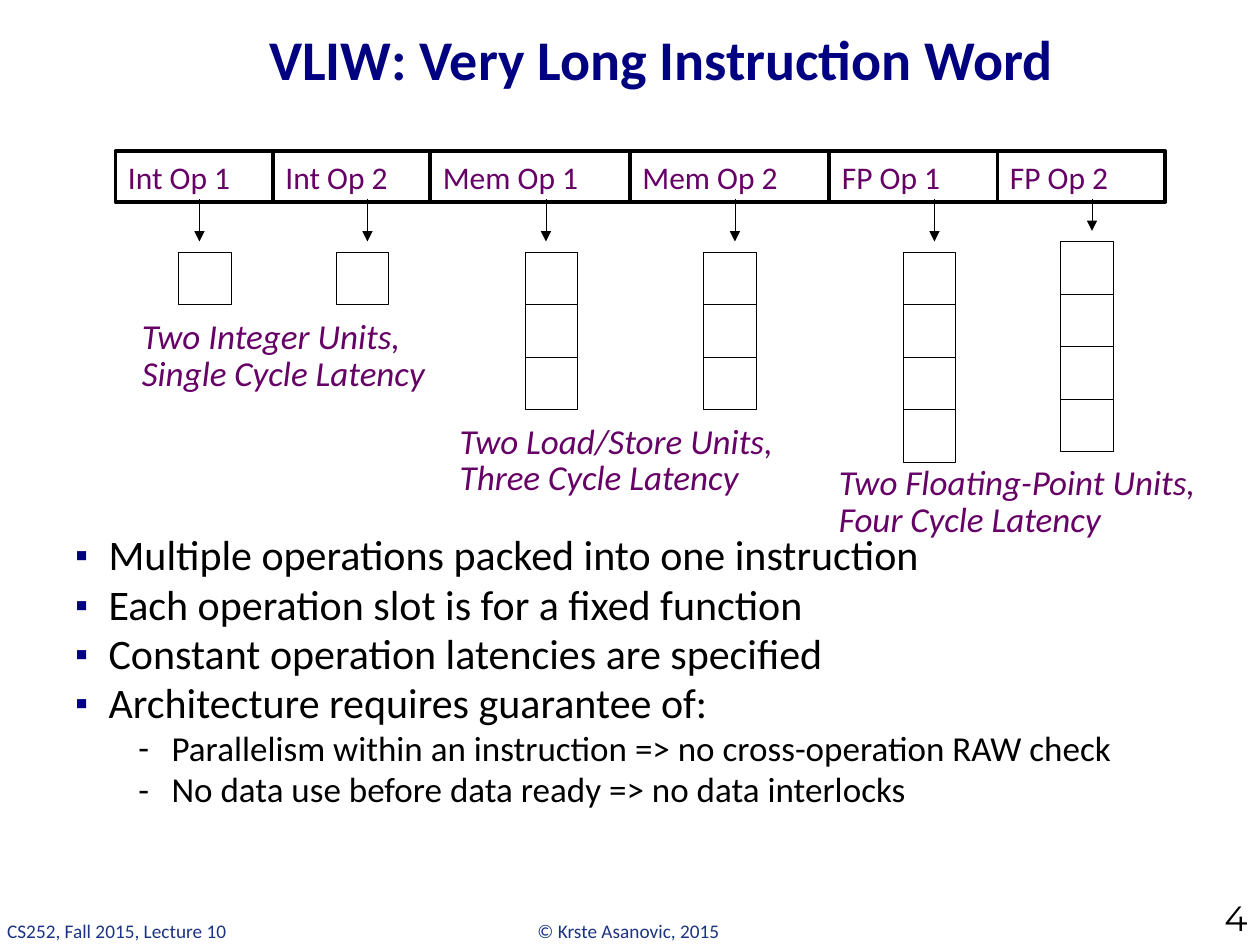
from itertools import accumulate

from lxml.etree import SubElement
from pptx import Presentation
from pptx.dml.color import RGBColor
from pptx.enum.shapes import MSO_CONNECTOR, MSO_SHAPE
from pptx.enum.text import MSO_ANCHOR, MSO_AUTO_SIZE, PP_ALIGN
from pptx.oxml.ns import qn
from pptx.util import Pt

COLORS = {"title": "000081", "bullet": "000080", "label": "660066",
          "footer": "1B3384", "black": "000000"}

FORMATS = {
    "title": {"size": Pt(32), "name": "Calibri", "bold": True},
    "point": {"size": Pt(24), "name": "Calibri"},
    "subpoint": {"size": Pt(20), "name": "Calibri"},
    "caption": {"size": Pt(20), "name": "Calibri", "italic": True},
    "slot": {"size": Pt(18), "name": "Calibri"},
    "footer": {"size": Pt(11), "name": "Calibri"},
    "number": {"size": Pt(20), "name": "Montserrat"},
}

# Operation slots: label, slot width, arrow x, arrow length, unit x, unit y, stages
# (x and y are measured from the corner of the instruction word)
SLOTS = [
    ("Int Op 1", 90, 48, 24, 36, 57.6, 1),
    ("Int Op 2", 90, 144, 24, 126, 57.6, 1),
    ("Mem Op 1", 114, 246, 24, 234, 57.6, 3),
    ("Mem Op 2", 114, 354, 24, 336, 57.6, 3),
    ("FP Op 1", 96, 468, 24, 450, 57.6, 4),
    ("FP Op 2", 96, 558, 18, 540, 51.6, 4),
]
SLOT_HEIGHT = 29
ARROW_TOP = 27.6
STAGE_SIZE = 30

CAPTIONS = [
    ((74, 181.5, 183, 47.5), ["Two Integer Units,", "Single Cycle Latency"]),
    ((255.6, 241.2, 201, 47.5), ["Two Load/Store Units,", "Three Cycle Latency"]),
    ((472.3, 265, 226, 47.5), ["Two Floating-Point Units,", "Four Cycle Latency"]),
]

POINTS = [
    ("point", "Multiple operations packed into one instruction"),
    ("point", "Each operation slot is for a fixed function"),
    ("point", "Constant operation latencies are specified"),
    ("point", "Architecture requires guarantee of:"),
    ("subpoint", "Parallelism within an instruction => no cross-operation RAW check"),
    ("subpoint", "No data use before data ready => no data interlocks"),
]
# Bullet character, its colour, its size in percent, left indent
BULLETS = {"point": ("▪", "bullet", 85, 19), "subpoint": ("-", "black", 100, 55)}
HANGING = 19


def rgb(color):
    return RGBColor.from_string(COLORS[color])


def write(paragraph, text, style, color):
    run = paragraph.add_run()
    run.text = text
    for name, value in FORMATS[style].items():
        setattr(run.font, name, value)
    run.font.color.rgb = rgb(color)


def add_text(slide, box, lines, style, color, wrap=False,
             anchor=MSO_ANCHOR.TOP, **paragraph_format):
    frame = slide.shapes.add_textbox(*map(Pt, box)).text_frame
    frame.word_wrap = wrap
    frame.vertical_anchor = anchor
    for index, line in enumerate(lines):
        paragraph = frame.add_paragraph() if index else frame.paragraphs[0]
        for name, value in paragraph_format.items():
            setattr(paragraph, name, value)
        write(paragraph, line, style, color)
    return frame


def add_rectangle(shapes, box, line_width):
    shape = shapes.add_shape(MSO_SHAPE.RECTANGLE, *map(Pt, box))
    shape.shadow.inherit = False
    shape.fill.background()
    shape.line.color.rgb = rgb("black")
    shape.line.width = Pt(line_width)
    return shape


def add_arrow(slide, x, top, length):
    arrow = slide.shapes.add_connector(
        MSO_CONNECTOR.STRAIGHT, Pt(x), Pt(top), Pt(x), Pt(top + length))
    arrow.line.color.rgb = rgb("black")
    arrow.line.width = Pt(0.25)
    SubElement(arrow.line._get_or_add_ln(), qn("a:tailEnd"), type="triangle")
    SubElement(arrow._element.spPr, qn("a:effectLst"))


def add_bullet(paragraph, style):
    character, color, size, indent = BULLETS[style]
    properties = paragraph._p.get_or_add_pPr()
    properties.set("marL", str(Pt(indent)))
    properties.set("indent", str(-Pt(HANGING)))
    bullet_color = SubElement(properties, qn("a:buClr"))
    SubElement(bullet_color, qn("a:srgbClr"), val=COLORS[color])
    SubElement(properties, qn("a:buSzPct"), val=str(size * 1000))
    SubElement(properties, qn("a:buFont"), typeface="Calibri")
    SubElement(properties, qn("a:buChar"), char=character)


def place_title(slide, box, text):
    title = slide.shapes.title
    title.left, title.top, title.width, title.height = map(Pt, box)
    frame = title.text_frame
    frame.auto_size = MSO_AUTO_SIZE.NONE
    frame.vertical_anchor = MSO_ANCHOR.MIDDLE
    frame.paragraphs[0].alignment = PP_ALIGN.CENTER
    write(frame.paragraphs[0], text, "title", "title")


def place_instruction_word(slide, left, top):
    word = slide.shapes.add_group_shape().shapes
    offsets = accumulate((slot[1] for slot in SLOTS), initial=0)
    for offset, slot in zip(offsets, SLOTS):
        label, width, arrow_x, arrow_length, unit_x, unit_y, stages = slot
        # Slot of the instruction word
        cell = add_rectangle(word, (left + offset, top, width, SLOT_HEIGHT), 2.25)
        cell.text_frame.vertical_anchor = MSO_ANCHOR.MIDDLE
        cell.text_frame.paragraphs[0].alignment = PP_ALIGN.LEFT
        write(cell.text_frame.paragraphs[0], label, "slot", "label")
        # Arrow to the functional unit and its pipeline stages
        add_arrow(slide, left + arrow_x, top + ARROW_TOP, arrow_length)
        unit = slide.shapes.add_group_shape().shapes
        for stage in range(stages):
            add_rectangle(unit, (left + unit_x, top + unit_y + stage * STAGE_SIZE,
                                 STAGE_SIZE, STAGE_SIZE), 0.25)


def place_captions(slide):
    for box, lines in CAPTIONS:
        frame = add_text(slide, box, lines, "caption", "label",
                         anchor=MSO_ANCHOR.MIDDLE, line_spacing=0.7)
        frame.paragraphs[1].space_before = Pt(4)


def place_points(slide, box):
    frame = slide.shapes.add_textbox(*map(Pt, box)).text_frame
    frame.word_wrap = True
    for index, (style, text) in enumerate(POINTS):
        paragraph = frame.add_paragraph() if index else frame.paragraphs[0]
        paragraph.line_spacing = 0.98
        add_bullet(paragraph, style)
        write(paragraph, text, style, "black")


def place_footer(slide, top):
    add_text(slide, (-3, top, 141, 21), ["CS252, Fall 2015, Lecture 10"],
             "footer", "footer")
    add_text(slide, (300, top, 120, 21), ["© Krste Asanovic, 2015"],
             "footer", "footer")
    add_text(slide, (654, top - 0.7, 66, 18.7), ["4"], "number", "black", wrap=True,
             anchor=MSO_ANCHOR.BOTTOM, alignment=PP_ALIGN.RIGHT)


def main():
    presentation = Presentation()
    presentation.slide_width, presentation.slide_height = Pt(720), Pt(540)
    slide = presentation.slides.add_slide(presentation.slide_layouts[5])
    place_footer(slide, 522)
    place_title(slide, (96, 6, 564, 54), "VLIW: Very Long Instruction Word")
    place_points(slide, (36, 300, 648, 204))
    place_captions(slide)
    place_instruction_word(slide, 66, 86.4)
    presentation.save("out.pptx")


if __name__ == "__main__":
    main()
